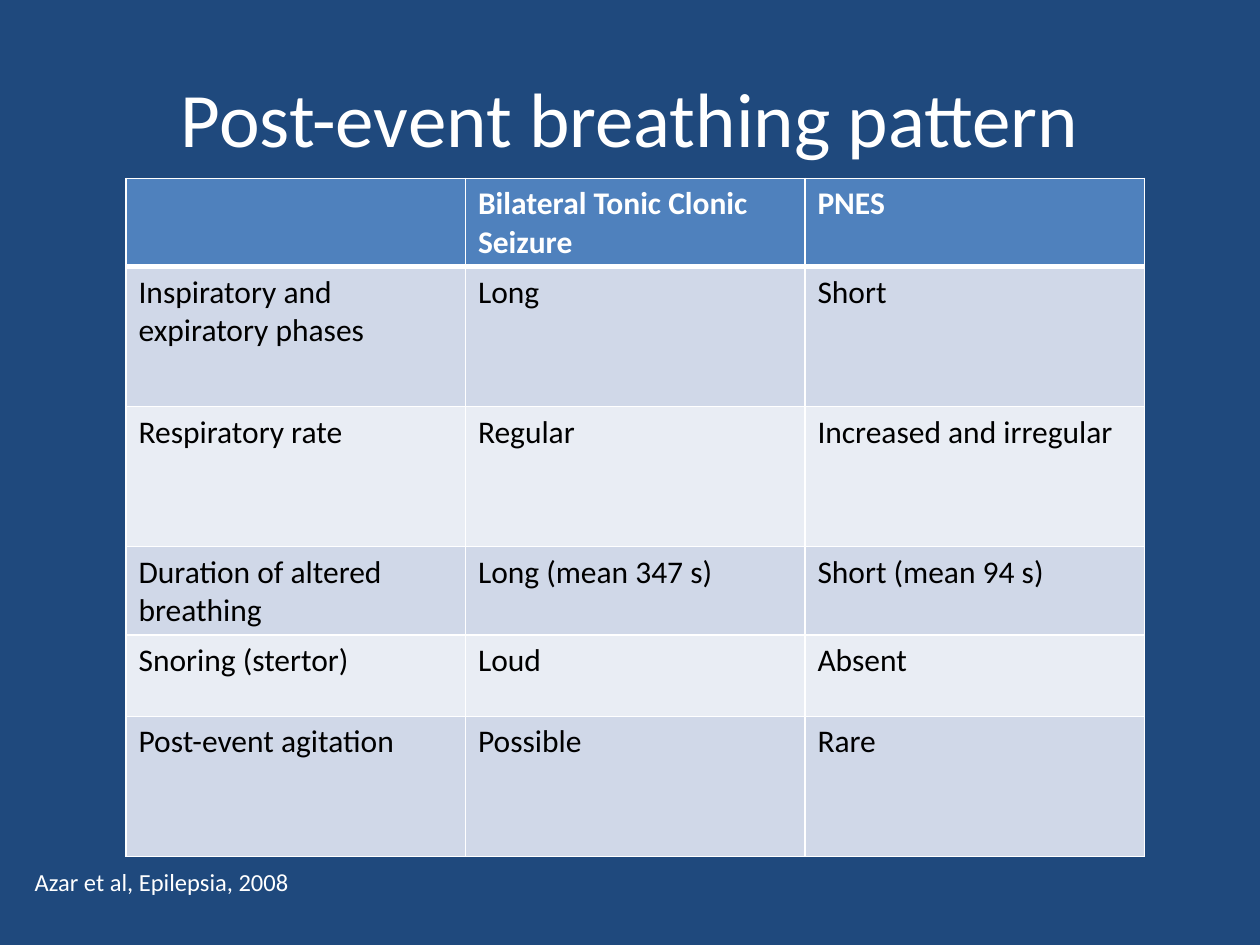
from lxml import etree
from pptx import Presentation
from pptx.dml.color import RGBColor
from pptx.enum.text import MSO_ANCHOR, PP_ALIGN
from pptx.oxml.ns import qn
from pptx.util import Pt

LEFT, CENTER = PP_ALIGN.LEFT, PP_ALIGN.CENTER
TOP, MIDDLE = MSO_ANCHOR.TOP, MSO_ANCHOR.MIDDLE

TITLE = "Post-event breathing pattern"
SOURCE = "Azar et al, Epilepsia, 2008"
ROWS = [
    ("", "Bilateral Tonic Clonic Seizure", "PNES"),
    ("Inspiratory and expiratory phases", "Long", "Short"),
    ("Respiratory rate", "Regular", "Increased and irregular"),
    ("Duration of altered breathing", "Long (mean 347 s)", "Short (mean 94 s)"),
    ("Snoring (stertor)", "Loud", "Absent"),
    ("Post-event agitation", "Possible", "Rare"),
]
ROW_HEIGHTS = [46.6, 80, 80, 46.6, 46.6, 80]
COL_WIDTH = 194

THEME = {
    "font": "Calibri",
    "background": "1F497D",
    "light": "FFFFFF",
    "dark": "000000",
    "header": "4F81BD",
    "bands": ("D0D8E8", "E9EDF4"),
    "title_size": 44,
    "table_size": 18,
    "source_size": 14,
}


def write(tf, text, *, size, color, bold=False, align=LEFT, anchor=TOP):
    tf.word_wrap = True
    tf.vertical_anchor = anchor
    p = tf.paragraphs[0]
    p.alignment = align
    p.font.size = Pt(size)
    if text:
        r = p.add_run()
        r.text = text
        r.font.name = THEME["font"]
        r.font.size = Pt(size)
        r.font.bold = bold
        r.font.color.rgb = RGBColor.from_string(color)


def add_text(s, text, left, top, width, height, **style):
    sp = s.shapes.add_textbox(Pt(left), Pt(top), Pt(width), Pt(height))
    write(sp.text_frame, text, **style)


def set_borders(cell, **widths):
    props = cell._tc.get_or_add_tcPr()
    for side in ("L", "R", "T", "B"):
        line = etree.SubElement(props, qn(f"a:ln{side}"), w=str(Pt(widths.get(side, 1))))
        fill = etree.SubElement(line, qn("a:solidFill"))
        etree.SubElement(fill, qn("a:srgbClr"), val=THEME["light"])


def add_comparison(s, left, top):
    cols = len(ROWS[0])
    frame = s.shapes.add_table(len(ROWS), cols, Pt(left), Pt(top),
                               Pt(COL_WIDTH * cols), Pt(sum(ROW_HEIGHTS)))
    table = frame.table
    for col in table.columns:
        col.width = Pt(COL_WIDTH)
    for i, (values, height) in enumerate(zip(ROWS, ROW_HEIGHTS)):
        table.rows[i].height = Pt(height)
        header = i == 0
        fill = THEME["header"] if header else THEME["bands"][(i - 1) % 2]
        for j, value in enumerate(values):
            cell = table.cell(i, j)
            set_borders(cell, T=3 if i == 1 else 1, B=3 if header else 1)
            cell.fill.solid()
            cell.fill.fore_color.rgb = RGBColor.from_string(fill)
            write(cell.text_frame, value, size=THEME["table_size"], bold=header,
                  color=THEME["light" if header else "dark"])


def main():
    prs = Presentation()
    prs.slide_width, prs.slide_height = Pt(720), Pt(540)
    s = prs.slides.add_slide(prs.slide_layouts[6])
    s.background.fill.solid()
    s.background.fill.fore_color.rgb = RGBColor.from_string(THEME["background"])
    add_text(s, TITLE, 36, 21.6, 648, 90, size=THEME["title_size"],
             color=THEME["light"], align=CENTER, anchor=MIDDLE)
    add_text(s, SOURCE, 12.7, 492, 635, 24.2, size=THEME["source_size"],
             color=THEME["light"])
    add_comparison(s, 72, 102)
    prs.save("out.pptx")


if __name__ == "__main__":
    main()
